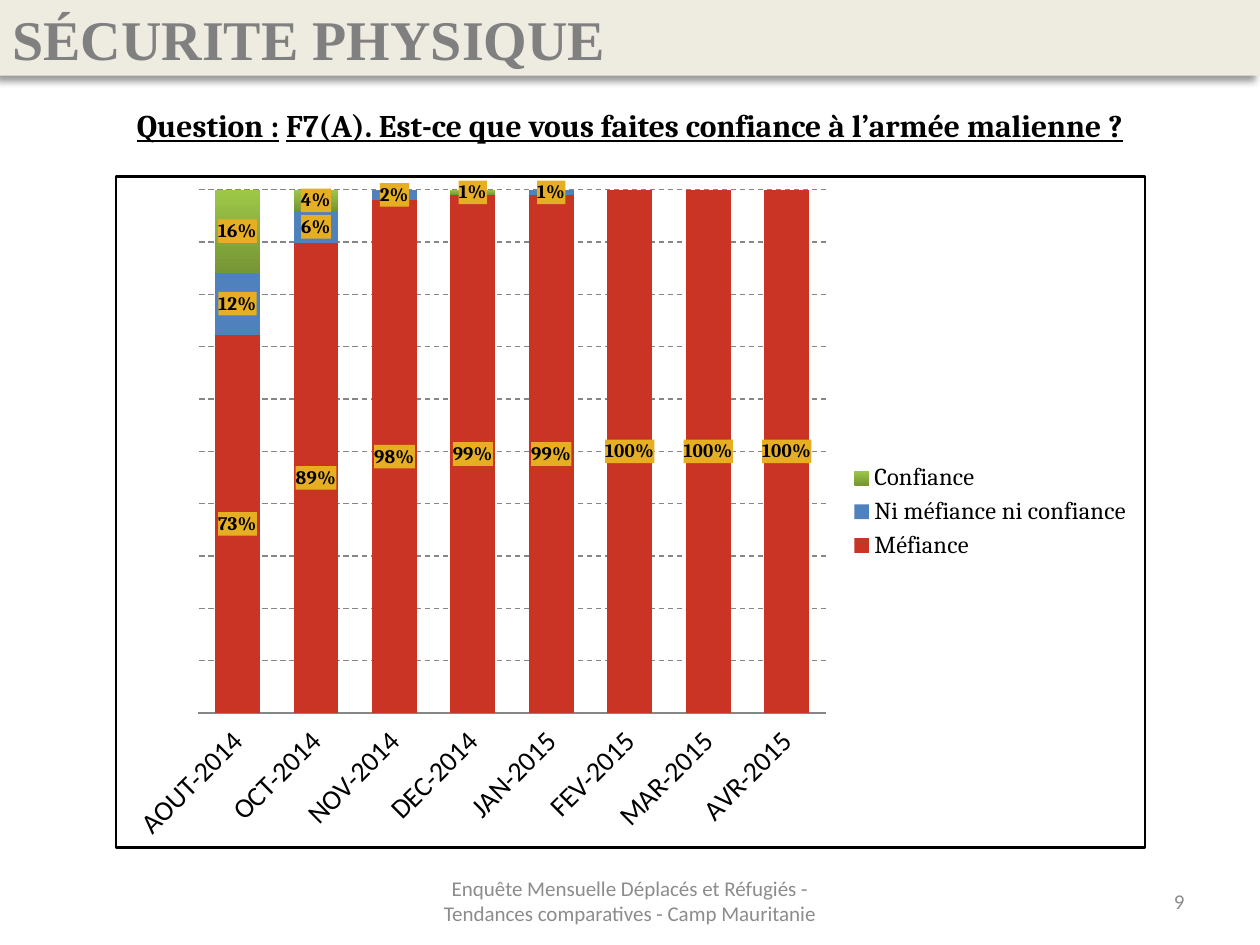
from lxml import etree
from pptx import Presentation
from pptx.chart.data import CategoryChartData
from pptx.dml.color import RGBColor
from pptx.enum.chart import XL_CHART_TYPE, XL_LEGEND_POSITION, XL_TICK_LABEL_POSITION, XL_TICK_MARK
from pptx.enum.dml import MSO_LINE
from pptx.enum.shapes import MSO_SHAPE
from pptx.enum.text import MSO_ANCHOR, PP_ALIGN
from pptx.oxml import parse_xml
from pptx.oxml.ns import nsdecls, qn
from pptx.util import Pt

STACKED = XL_CHART_TYPE.COLUMN_STACKED_100
LEGEND_RIGHT = XL_LEGEND_POSITION.RIGHT
LOW = XL_TICK_LABEL_POSITION.LOW
NO_TICK = XL_TICK_MARK.NONE
DASH = MSO_LINE.DASH
RECT = MSO_SHAPE.RECTANGLE
MIDDLE = MSO_ANCHOR.MIDDLE
LEFT, CENTER, RIGHT = PP_ALIGN.LEFT, PP_ALIGN.CENTER, PP_ALIGN.RIGHT

COLORS = {
    "black": "000000", "band": "EEECE1", "title": "808080", "footer": "8C8C8C",
    "grid": "868686", "label": "E6AE23", "distrust": "CA3424", "neutral": "4F81BD",
    "trust_top": "9DC847", "trust_bottom": "769535",
}
MONTHS = ["AOUT-2014", "OCT-2014", "NOV-2014", "DEC-2014",
          "JAN-2015", "FEV-2015", "MAR-2015", "AVR-2015"]
SERIES = [
    ("Méfiance", ["distrust"], [0.73, 0.89, 0.98, 0.99, 0.99, 1, 1, 1]),
    ("Ni méfiance ni confiance", ["neutral"], [0.12, 0.06, 0.02, 0, 0.01, 0, 0, 0]),
    ("Confiance", ["trust_top", "trust_bottom"], [0.16, 0.04, 0, 0.01, 0, 0, 0, 0]),
]
PLOT_AREA = {"x": 0.08, "y": 0.02, "w": 0.61, "h": 0.78}


class SlideBuilder:
    """Hold the style and the current slide, and add each kind of element."""

    def __init__(self, slide, colors):
        self.shapes = slide.shapes
        self.colors = colors

    def rgb(self, name):
        return RGBColor.from_string(self.colors[name])

    def font(self, font, name, size, color="black", bold=False):
        font.name, font.size, font.bold = name, Pt(size), bold
        font.color.rgb = self.rgb(color)

    def set_text(self, sp, runs, align, *style):
        tf = sp.text_frame
        tf.word_wrap = True
        tf.vertical_anchor = MIDDLE
        p = tf.paragraphs[0]
        p.alignment = align
        self.font(p.font, *style)
        for text, underline in runs:
            r = p.add_run()
            r.text = text
            if underline:
                r.font.underline = True

    def text(self, box, runs, align, *style):
        self.set_text(self.shapes.add_textbox(*map(Pt, box)), runs, align, *style)

    def band(self, box, title, *style):
        sp = self.shapes.add_shape(RECT, *map(Pt, box))
        sp.fill.solid()
        sp.fill.fore_color.rgb = self.rgb("band")
        sp.line.fill.background()
        sp.shadow.inherit = False
        effects = sp._element.spPr.find(qn("a:effectLst"))
        effects.append(parse_xml(
            f'<a:outerShdw {nsdecls("a")} blurRad="{Pt(4)}" dist="{Pt(4)}" dir="8100000">'
            f'<a:srgbClr val="{self.colors["black"]}"><a:alpha val="40000"/></a:srgbClr>'
            '</a:outerShdw>'))
        self.set_text(sp, [(title, False)], LEFT, *style)

    def chart(self, box, months, series, plot_area):
        data = CategoryChartData(number_format="0%")
        data.categories = months
        for name, _, values in series:
            data.add_series(name, values)
        chart = self.shapes.add_chart(STACKED, *map(Pt, box), data).chart
        chart.has_title = False
        self.font(chart.font, "Calibri", 10)
        chart._chartSpace.find(qn("c:txPr")).addprevious(parse_xml(
            f'<c:spPr {nsdecls("c", "a")}><a:noFill/><a:ln w="{Pt(1.5)}"><a:solidFill>'
            f'<a:srgbClr val="{self.colors["black"]}"/></a:solidFill></a:ln></c:spPr>'))
        chart.has_legend = True
        chart.legend.position = LEGEND_RIGHT
        chart.legend.include_in_layout = False
        self.font(chart.legend.font, "Cambria", 14)
        self.axes(chart)
        self.layout(chart, plot_area)
        plot = chart.plots[0]
        plot.vary_by_categories = False
        plot.gap_width, plot.overlap = 75, 100
        for ser, (_, colors, values) in zip(plot.series, series):
            self.fill_series(ser, colors)
            self.labels(ser, values)

    def axes(self, chart):
        cat, val = chart.category_axis, chart.value_axis
        cat.major_tick_mark = NO_TICK
        cat.tick_label_position = LOW
        cat.format.line.color.rgb = self.rgb("grid")
        self.font(cat.tick_labels.font, "Calibri", 16)
        cat._element.find(qn("c:txPr")).find(qn("a:bodyPr")).set("rot", "-2700000")
        val.visible = False
        val.minimum_scale, val.maximum_scale, val.major_unit = 0, 1, 0.1
        val.tick_labels.number_format = "0%"
        val.tick_labels.number_format_is_linked = False
        val.has_major_gridlines = True
        line = val.major_gridlines.format.line
        line.color.rgb = self.rgb("grid")
        line.width, line.dash_style = Pt(0.75), DASH

    def layout(self, chart, plot_area):
        area = chart._chartSpace.chart.plotArea
        for old in area.findall(qn("c:layout")):
            area.remove(old)
        layout = etree.Element(qn("c:layout"))
        manual = etree.SubElement(layout, qn("c:manualLayout"))
        parts = {"layoutTarget": "inner", "xMode": "edge", "yMode": "edge", **plot_area}
        for tag, value in parts.items():
            etree.SubElement(manual, qn(f"c:{tag}")).set("val", str(value))
        area.insert(0, layout)

    def fill_series(self, ser, colors):
        fill = ser.format.fill
        ser.invert_if_negative = False
        if len(colors) == 1:
            fill.solid()
            fill.fore_color.rgb = self.rgb(colors[0])
            return
        fill.gradient()
        fill.gradient_angle = 270
        for stop, name in zip(fill.gradient_stops, colors):
            stop.color.rgb = self.rgb(name)

    def labels(self, ser, values):
        labels = ser.data_labels
        labels.show_value = True
        labels.number_format = "0%"
        labels.number_format_is_linked = False
        self.font(labels.font, "Cambria", 11, "black", True)
        element = labels._element
        element.find(qn("c:txPr")).addprevious(parse_xml(
            f'<c:spPr {nsdecls("c", "a")}><a:solidFill>'
            f'<a:srgbClr val="{self.colors["label"]}"/></a:solidFill></c:spPr>'))
        zeros = [i for i, value in enumerate(values) if value == 0]
        for position, i in enumerate(zeros):
            element.insert(position, parse_xml(
                f'<c:dLbl {nsdecls("c")}><c:idx val="{i}"/><c:delete val="1"/></c:dLbl>'))


def main():
    prs = Presentation()
    prs.slide_width, prs.slide_height = Pt(720), Pt(540)
    s = SlideBuilder(prs.slides.add_slide(prs.slide_layouts[6]), COLORS)
    s.text((516, 500.5, 168, 28.75), [("9", False)], RIGHT, "Calibri", 12, "footer")
    s.text((246, 500.5, 228, 28.75),
           [("Enquête Mensuelle Déplacés et Réfugiés - Tendances comparatives - Camp Mauritanie", False)],
           CENTER, "Calibri", 12, "footer")
    s.band((0, 0, 720, 43.2), "SÉCURITE PHYSIQUE", "Times New Roman", 32, "title", True)
    s.text((0, 57, 720, 29),
           [("Question :", True), (" ", False),
            ("F7(A). Est-ce que vous faites confiance à l’armée malienne ?", True)],
           CENTER, "Cambria", 18, "black", True)
    s.chart((65.5, 100, 589.5, 385), MONTHS, SERIES, PLOT_AREA)
    prs.save("out.pptx")


if __name__ == "__main__":
    main()
